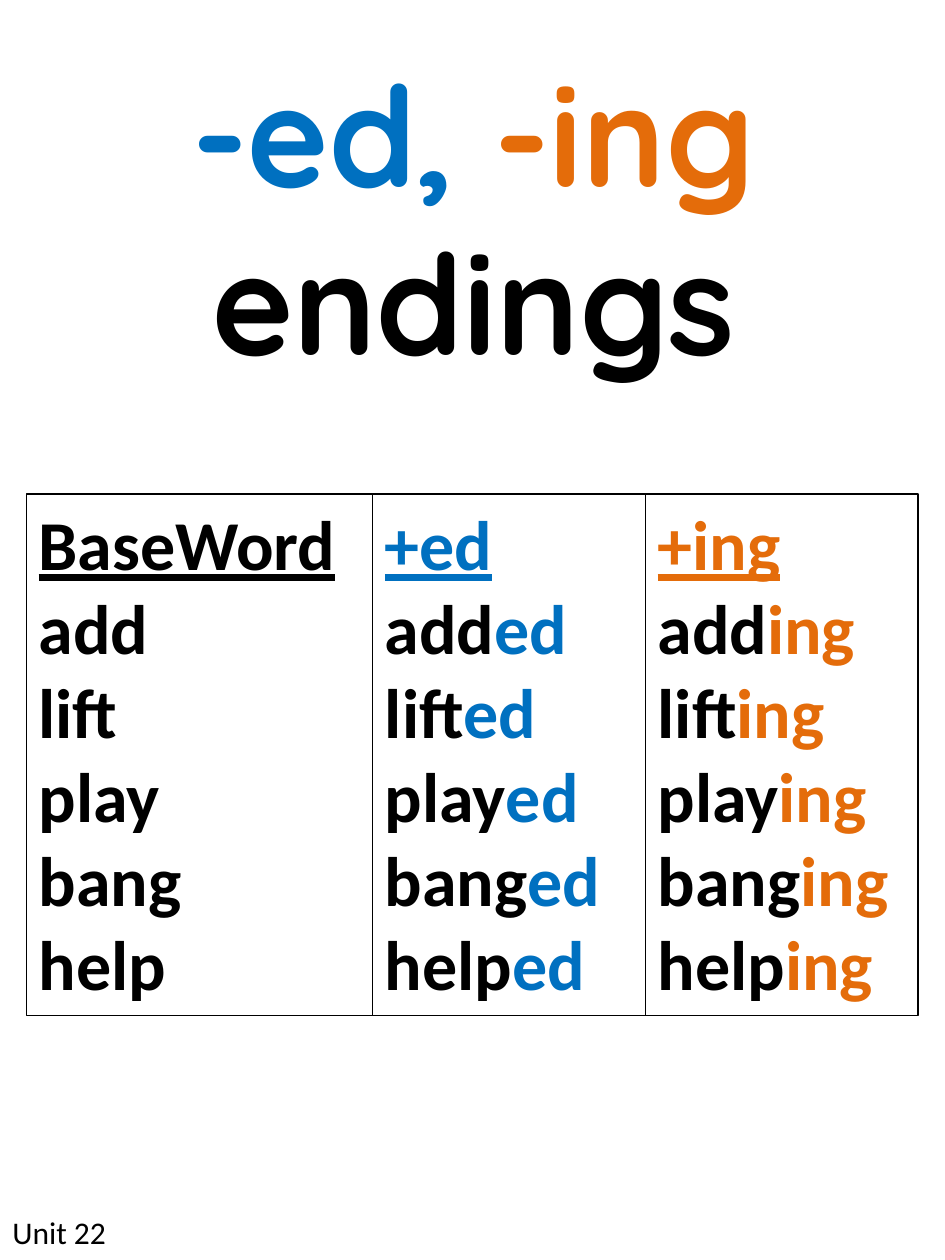
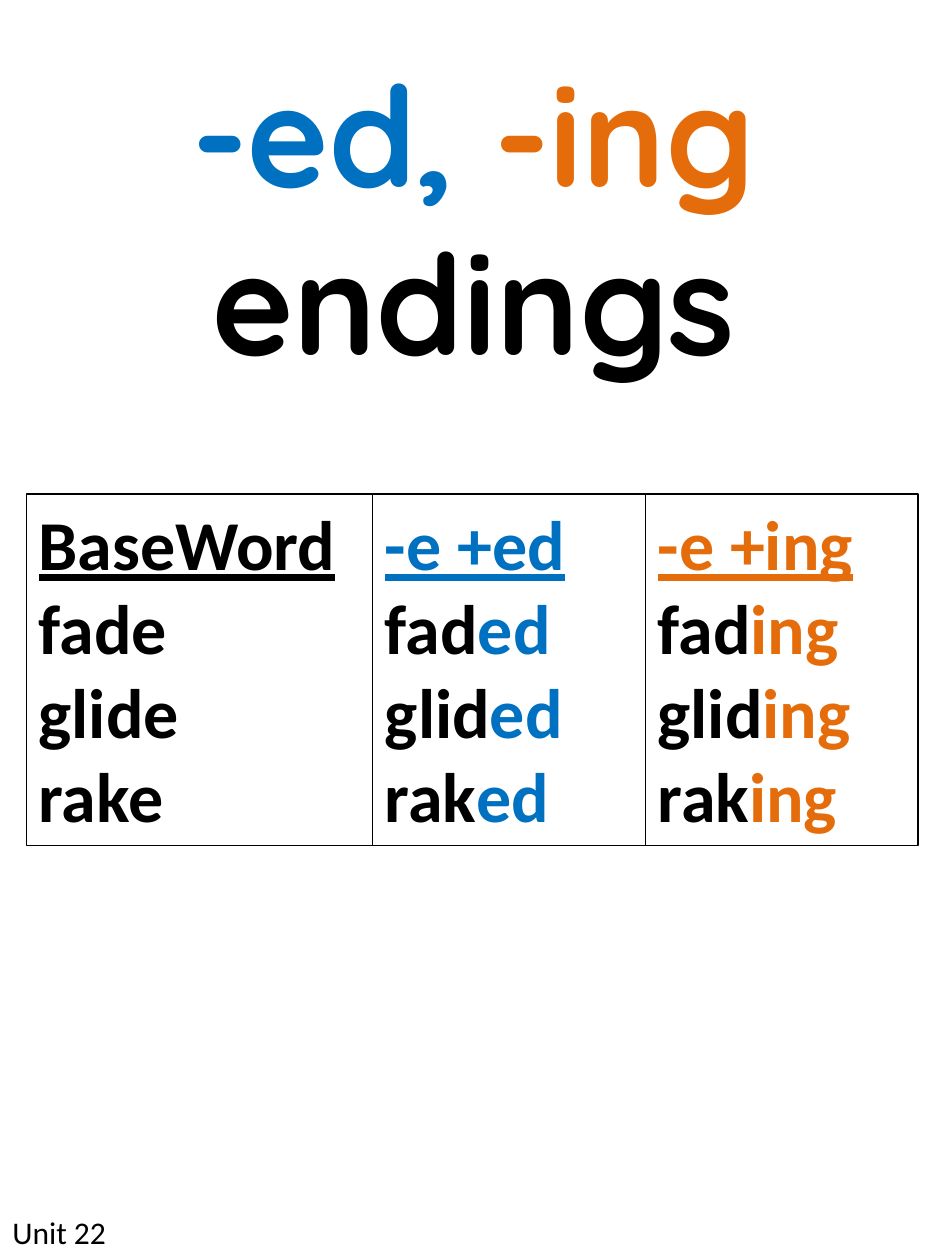
"""Build two word-ending charts for a spelling unit."""
from pptx import Presentation
from pptx import util as u
from pptx.dml.color import RGBColor
from pptx.enum import shapes, text

COLOURS = {"base": "000000", "ed": "0070C0", "ing": "E46C0A"}
COLUMN_WIDTHS = {"base": 6.98, "ed": 5.5, "ing": 5.5}
CHART_LEFT, CHART_TOP = 0.53, 9.96
ROW_HEIGHT, CHART_PADDING = 1.71, 0.25


def add_text(paragraph, words, *, size, font="Calibri", colour="base", bold=True, underline=False):
    run = paragraph.add_run()
    run.text = words
    run.font.name = font
    run.font.size = u.Pt(size)
    run.font.bold = bold
    run.font.underline = underline
    run.font.color.rgb = RGBColor.from_string(COLOURS[colour])


class WordChart:
    def __init__(self):
        self.deck = Presentation()
        self.deck.slide_width, self.deck.slide_height = u.Cm(19.05), u.Cm(25.4)
        self.slide = None

    def new_slide(self):
        self.slide = self.deck.slides.add_slide(self.deck.slide_layouts[6])

    def text_box(self, left, top, width, height):
        frame = self.slide.shapes.add_textbox(*map(u.Cm, (left, top, width, height))).text_frame
        frame.word_wrap = True
        frame.auto_size = text.MSO_AUTO_SIZE.SHAPE_TO_FIT_TEXT
        return frame.paragraphs[0]

    def footer(self, unit):
        add_text(self.text_box(0, 24.33, 3.39, 1.07), unit, size=18, bold=False)

    def title(self, parts):
        heading = self.text_box(0.56, 0.84, 17.98, 7.09)
        heading.alignment = text.PP_ALIGN.CENTER
        for words, colour in parts:
            add_text(heading, words, size=80, font="Quicksand", colour=colour)

    def column(self, group, left, width, header, ending, rows):
        height = ROW_HEIGHT * (len(rows) + 1) + CHART_PADDING
        cell = group.shapes.add_shape(
            shapes.MSO_SHAPE.RECTANGLE, *map(u.Cm, (left, CHART_TOP, width, height)))
        cell.shadow.inherit = False
        cell.fill.background()
        cell.line.color.rgb = RGBColor.from_string(COLOURS["base"])
        cell.line.width = u.Pt(0.75)
        frame = cell.text_frame
        frame.word_wrap = True
        frame.auto_size = text.MSO_AUTO_SIZE.SHAPE_TO_FIT_TEXT
        frame.vertical_anchor = text.MSO_ANCHOR.TOP
        frame.paragraphs[0].alignment = text.PP_ALIGN.LEFT
        add_text(frame.paragraphs[0], header, size=40, colour=ending, underline=True)
        for stem in rows:
            line = frame.add_paragraph()
            line.alignment = text.PP_ALIGN.LEFT
            add_text(line, stem, size=40)
            if ending != "base":
                add_text(line, ending, size=40, colour=ending)

    def word_columns(self, rule, words):
        group = self.slide.shapes.add_group_shape()
        stems = [word.removesuffix("e") for word in words]
        left = CHART_LEFT
        for ending, width in COLUMN_WIDTHS.items():
            if ending == "base":
                self.column(group, left, width, "BaseWord", ending, words)
            else:
                self.column(group, left, width, f"{rule}+{ending}", ending, stems)
            left += width


def main():
    chart = WordChart()
    lessons = [
        ("", ["add", "lift", "play", "bang", "help"]),
        ("-e ", ["fade", "glide", "rake"]),
    ]
    for rule, words in lessons:
        chart.new_slide()
        chart.footer("Unit 22")
        chart.title([("-ed, ", "ed"), ("-ing ", "ing"), ("endings", "base")])
        chart.word_columns(rule, words)
    chart.deck.save("out.pptx")


if __name__ == "__main__":
    main()
